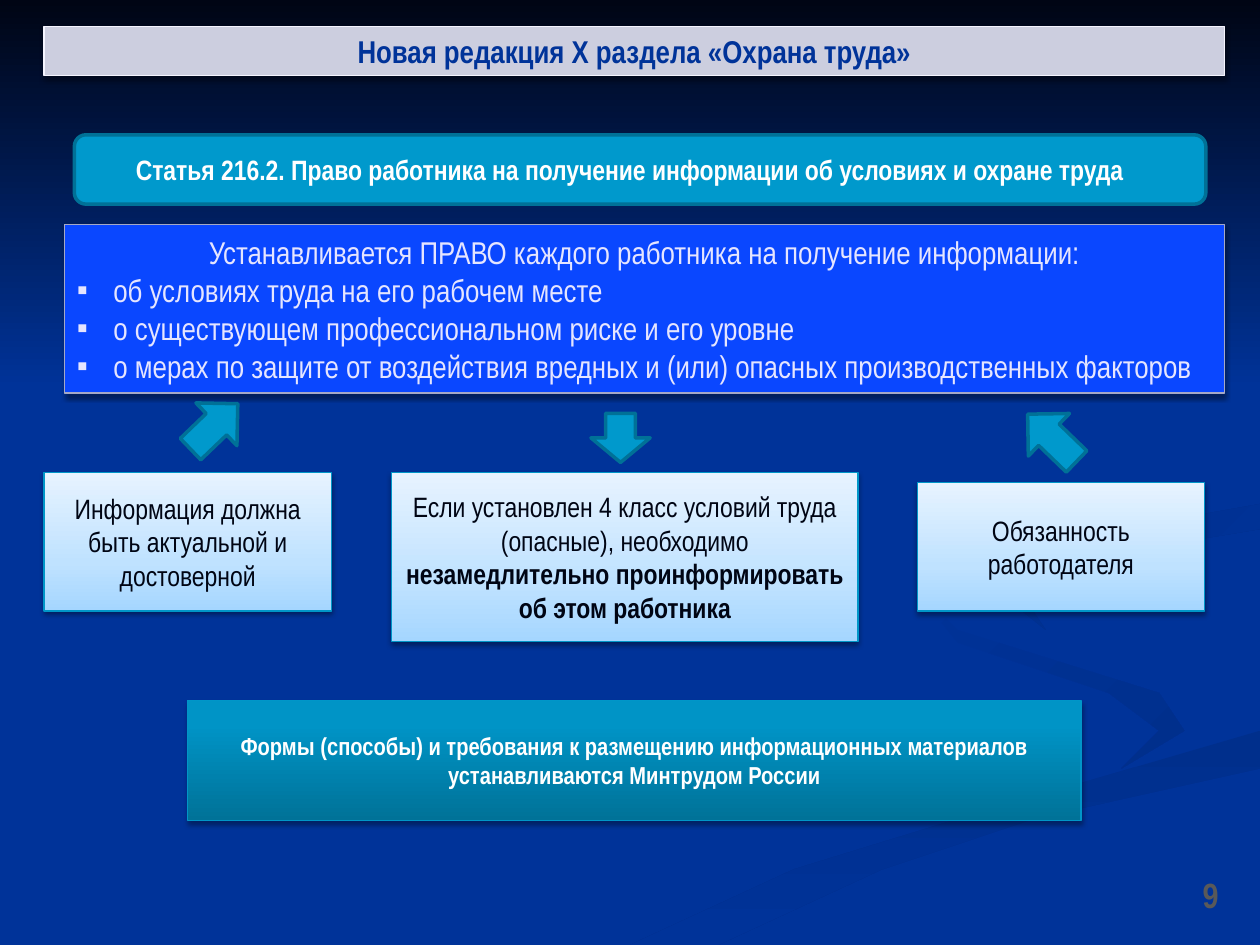
from lxml import etree
from pptx import Presentation
from pptx.dml.color import RGBColor
from pptx.enum import shapes, text
from pptx.oxml.ns import qn
from pptx.util import Inches, Pt

FONT = "Arial Narrow"
NAVY = RGBColor.from_string("003399")
MIDNIGHT = RGBColor.from_string("000514")
DEEP_BLUE = RGBColor.from_string("002F8C")
BRIGHT_BLUE = RGBColor.from_string("0A47FF")
LAVENDER = RGBColor.from_string("E5E5FF")
SILVER = RGBColor.from_string("CCCEDF")
SILVER_EDGE = RGBColor.from_string("F5F5FF")
STEEL_EDGE = RGBColor.from_string("A5A9C6")
TEAL = RGBColor.from_string("0099CC")
TEAL_DARK = RGBColor.from_string("007197")
TEAL_EDGE = RGBColor.from_string("0096C8")
WHITE = RGBColor.from_string("FFFFFF")
GREY = RGBColor.from_string("595959")

PALE_STOPS = [(0, RGBColor.from_string("A5D6FF")), (35, RGBColor.from_string("BFE2FF")),
              (100, RGBColor.from_string("E7F3FF"))]
TEAL_STOPS = [(0, RGBColor.from_string("007298")), (80, RGBColor.from_string("0094C6")),
              (100, RGBColor.from_string("0095C7"))]

# Background ribbons: start colour, end colour, angle, outline in tenths of an inch
RIBBONS = [
    (DEEP_BLUE, NAVY, 90,
     [(50, 75), (57, 75), (70, 69), (82, 65), (100, 61), (100, 58), (76, 65), (63, 69)]),
    (NAVY, DEEP_BLUE, 45,
     [(72, 46), (76, 51), (88, 55), (92, 58), (89, 61), (94, 58), (92, 55), (76, 50)]),
    (DEEP_BLUE, NAVY, 45,
     [(78, 46), (83, 50), (81, 47), (88, 44), (100, 42), (100, 40), (83, 43)]),
]


def place(shape, left, top, width, height):
    shape.left, shape.top = Inches(left), Inches(top)
    shape.width, shape.height = Inches(width), Inches(height)


def set_gradient(shape, stops, angle):
    """Linear gradient from (percent, colour) stops; angle runs clockwise."""
    shape.fill.gradient()
    gradient = shape.element.spPr.find(qn("a:gradFill"))
    for child in list(gradient):
        gradient.remove(child)
    stop_list = etree.SubElement(gradient, qn("a:gsLst"))
    for percent, colour in stops:
        stop = etree.SubElement(stop_list, qn("a:gs"), pos=str(percent * 1000))
        etree.SubElement(stop, qn("a:srgbClr"), val=str(colour))
    etree.SubElement(gradient, qn("a:lin"), ang=str(angle * 60000), scaled="0")


def style(shape, fill, edge, weight=0.75, shadow=0):
    """Fill with a colour or upward gradient stops; shadow is opacity in percent."""
    if isinstance(fill, list):
        set_gradient(shape, fill, 270)
    else:
        shape.fill.solid()
        shape.fill.fore_color.rgb = fill
    shape.line.color.rgb = edge
    shape.line.width = Pt(weight)
    shape.shadow.inherit = False
    if shadow:
        effects = shape.element.spPr.find(qn("a:effectLst"))
        outer = etree.SubElement(effects, qn("a:outerShdw"), blurRad=str(Pt(3.1)),
                                 dist=str(Pt(1.7)), dir="5400000", rotWithShape="0")
        black = etree.SubElement(outer, qn("a:srgbClr"), val="000000")
        etree.SubElement(black, qn("a:alpha"), val=str(shadow * 1000))


def prepare_frame(shape):
    frame = shape.text_frame
    frame.word_wrap = True
    frame.auto_size = text.MSO_AUTO_SIZE.NONE
    frame.vertical_anchor = text.MSO_ANCHOR.MIDDLE
    return frame


def write(paragraph, runs, size, colour, align=text.PP_ALIGN.CENTER):
    """Add (wording, bold) runs to a paragraph."""
    paragraph.alignment = align
    paragraph.space_before = Pt(0)
    for wording, bold in runs:
        run = paragraph.add_run()
        run.text = wording
        run.font.name, run.font.size, run.font.bold = FONT, Pt(size), bold
        run.font.color.rgb = colour


def set_bullet(paragraph, mark=None, indent=0.0):
    props = paragraph._p.get_or_add_pPr()
    props.set("marL", str(Inches(indent)))
    props.set("indent", str(-Inches(indent)))
    if mark:
        etree.SubElement(props, qn("a:buFont"), typeface="Arial")
        etree.SubElement(props, qn("a:buChar"), char=mark)
    else:
        etree.SubElement(props, qn("a:buNone"))


def add_background(slide):
    slide.background.fill.solid()
    slide.background.fill.fore_color.rgb = NAVY
    sky = slide.shapes.add_shape(shapes.MSO_SHAPE.RECTANGLE, 0, 0, Inches(10), Inches(3.08))
    layers = [(sky, MIDNIGHT, NAVY, 90)]
    for start, end, angle, outline in RIBBONS:
        builder = slide.shapes.build_freeform(*outline[0], scale=Inches(0.1))
        builder.add_line_segments(outline[1:], close=True)
        layers.append((builder.convert_to_shape(), start, end, angle))
    for layer, start, end, angle in layers:
        set_gradient(layer, [(0, start), (100, end)], angle)
        layer.line.fill.background()
        layer.shadow.inherit = False


def add_title(slide, wording):
    title = slide.shapes.title
    place(title, 0.35, 0.21, 9.37, 0.39)
    style(title, SILVER, SILVER_EDGE, shadow=35)
    write(prepare_frame(title).paragraphs[0], [(wording, True)], 18, NAVY)
    slide.shapes._spTree.append(title.element)


def add_rights(slide, heading, rights):
    body = slide.placeholders[1]
    place(body, 0.51, 1.78, 9.21, 1.34)
    style(body, BRIGHT_BLUE, STEEL_EDGE, shadow=38)
    frame = prepare_frame(body)
    write(frame.paragraphs[0], [(heading, False)], 18, LAVENDER)
    set_bullet(frame.paragraphs[0])
    for right in rights:
        item = frame.add_paragraph()
        write(item, [(right, False)], 18, LAVENDER, text.PP_ALIGN.JUSTIFY)
        set_bullet(item, "▪", 0.29)
    slide.shapes._spTree.append(body.element)


def add_box(slide, frame, runs, size, colour, fill, edge,
            kind=shapes.MSO_SHAPE.RECTANGLE, **look):
    box = slide.shapes.add_shape(kind, *map(Inches, frame))
    style(box, fill, edge, **look)
    write(prepare_frame(box).paragraphs[0], runs, size, colour)
    return box


def add_arrow(slide, kind, frame, rotation=0):
    arrow = slide.shapes.add_shape(kind, *map(Inches, frame))
    arrow.rotation = rotation
    style(arrow, TEAL, TEAL_DARK, weight=2)


def add_page_number(slide, number):
    box = slide.shapes.add_textbox(*map(Inches, (7.44, 6.9, 2.33, 0.4)))
    write(prepare_frame(box).paragraphs[0], [(number, True)], 20, GREY, text.PP_ALIGN.RIGHT)


def main():
    deck = Presentation()
    deck.slide_width, deck.slide_height = Inches(10), Inches(7.5)
    slide = deck.slides.add_slide(deck.slide_layouts[1])
    add_background(slide)
    add_rights(slide, "Устанавливается ПРАВО каждого работника на получение информации:", [
        "об условиях труда на его рабочем месте",
        "о существующем профессиональном риске и его уровне",
        "о мерах по защите от воздействия вредных и (или) опасных производственных факторов"])
    add_page_number(slide, "9")
    add_title(slide, "Новая редакция Х раздела «Охрана труда»")

    article = add_box(
        slide, (0.59, 1.07, 8.98, 0.55),
        [("Статья 216.2. Право работника на получение информации об условиях и охране труда", True)],
        16, WHITE, TEAL, TEAL_DARK, kind=shapes.MSO_SHAPE.ROUNDED_RECTANGLE, weight=2)
    article.text_frame.margin_right = Inches(0.26)

    add_box(slide, (1.49, 5.56, 7.09, 0.95),
            [("Формы (способы) и требования к размещению информационных материалов "
              "устанавливаются Минтрудом России", True)],
            14, WHITE, TEAL_STOPS, TEAL_EDGE, shadow=35)
    for frame, runs in [
        ((0.35, 3.75, 2.28, 1.1), [("Информация должна быть актуальной и достоверной", False)]),
        ((3.11, 3.75, 3.7, 1.34),
         [("Если установлен 4 класс условий труда (опасные), необходимо ", False),
          ("незамедлительно проинформировать об этом работника", True)]),
        ((7.28, 3.83, 2.28, 1.02), [("Обязанность работодателя", False)]),
    ]:
        add_box(slide, frame, runs, 16, MIDNIGHT, PALE_STOPS, TEAL_EDGE, shadow=38)

    add_arrow(slide, shapes.MSO_SHAPE.RIGHT_ARROW, (1.44, 3.15, 0.52, 0.47), 316.2)
    add_arrow(slide, shapes.MSO_SHAPE.RIGHT_ARROW, (8.08, 3.24, 0.54, 0.47), 224)
    add_arrow(slide, shapes.MSO_SHAPE.DOWN_ARROW, (4.69, 3.28, 0.47, 0.39))
    deck.save("out.pptx")


if __name__ == "__main__":
    main()
